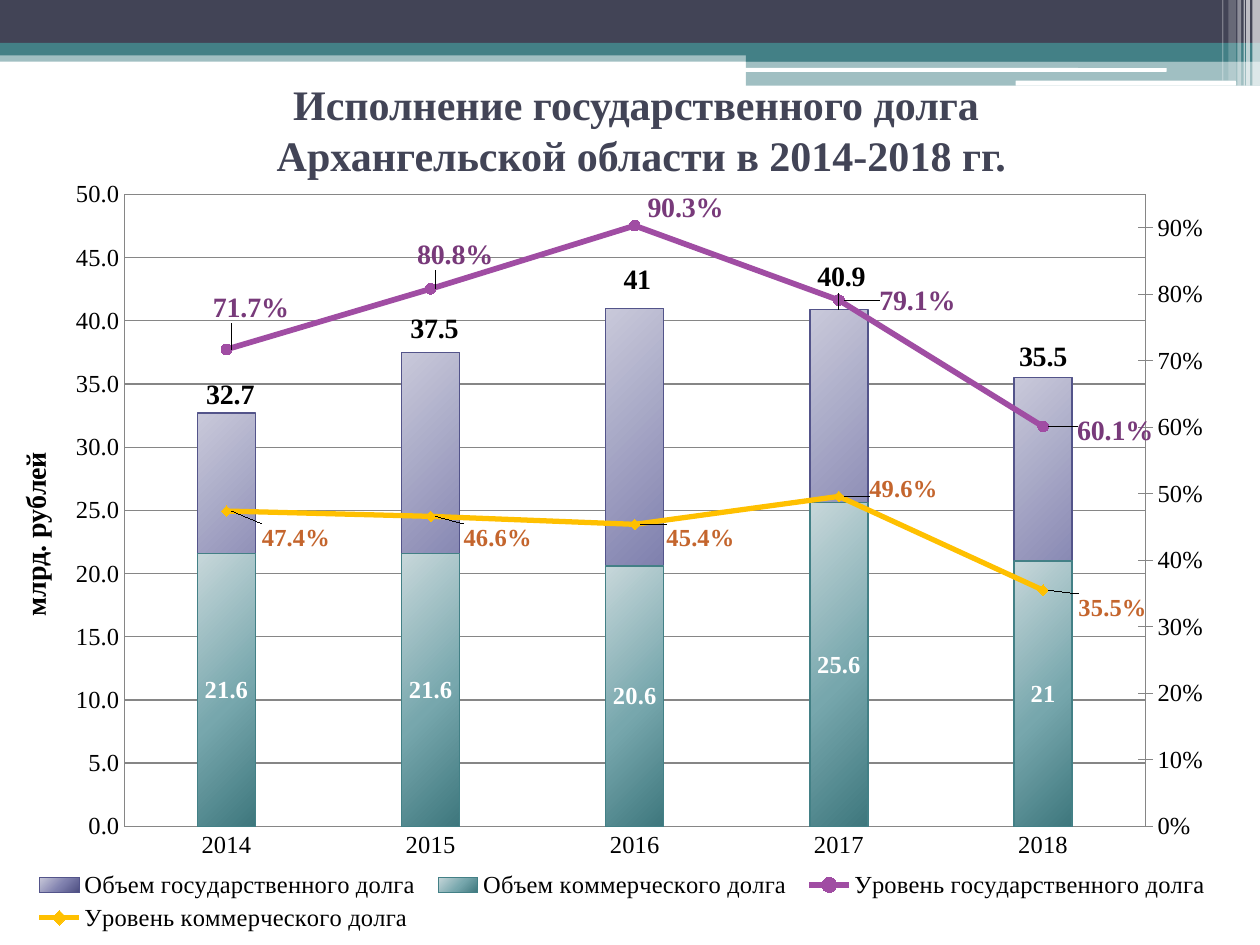
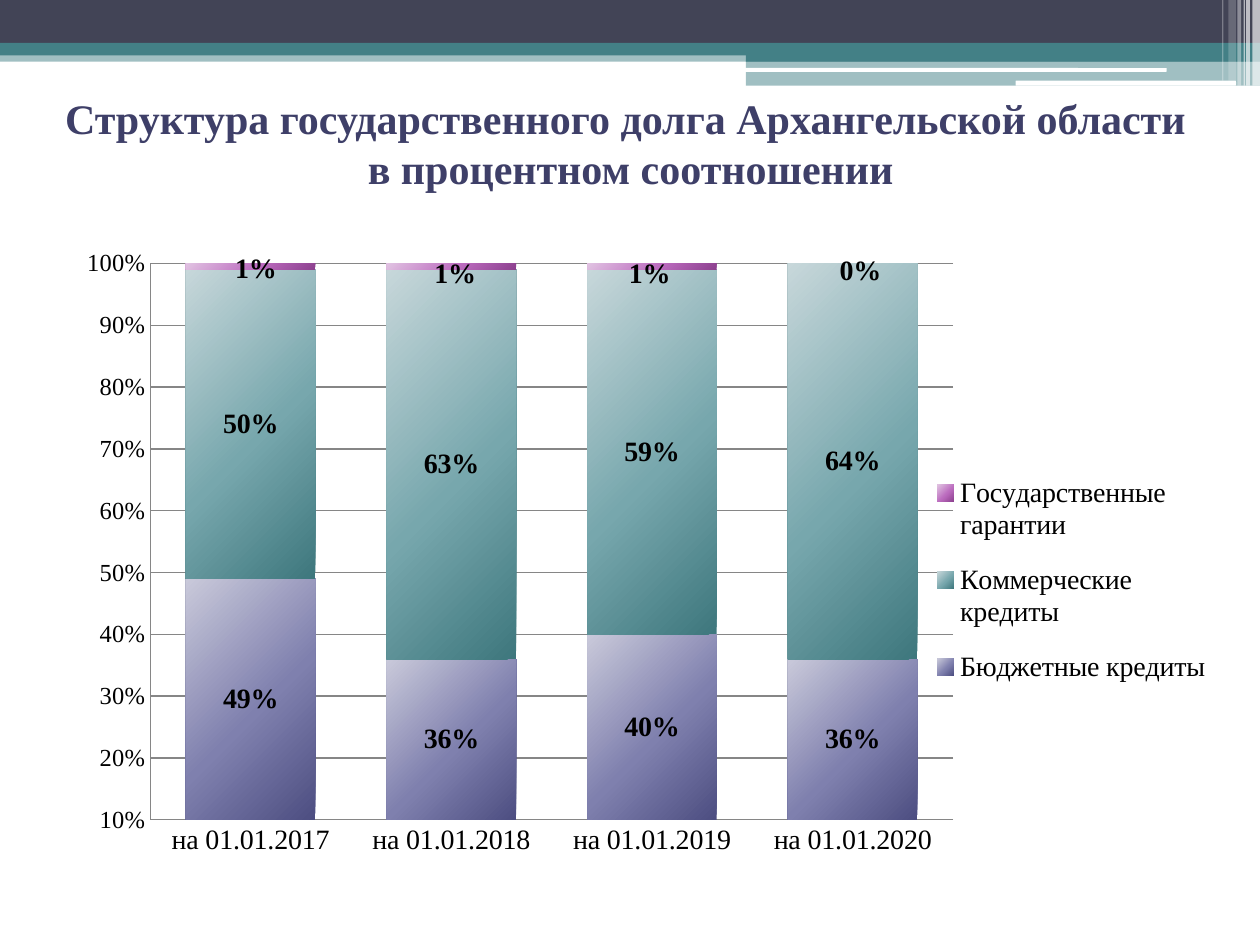
from dataclasses import dataclass
from typing import Any, NamedTuple, Optional

from pptx import Presentation
from pptx.chart.axis import ValueAxis
from pptx.chart.data import CategoryChartData
from pptx.dml.color import RGBColor
from pptx.enum.chart import (XL_CHART_TYPE, XL_LABEL_POSITION, XL_LEGEND_POSITION,
                             XL_MARKER_STYLE, XL_TICK_MARK)
from pptx.enum.shapes import MSO_SHAPE
from pptx.enum.text import MSO_ANCHOR, MSO_AUTO_SIZE, PP_ALIGN
from pptx.oxml import parse_xml
from pptx.oxml.ns import nsdecls, qn
from pptx.util import Inches, Pt

FONT = "Times New Roman"
BLACK = RGBColor(0x00, 0x00, 0x00)
WHITE = RGBColor(0xFF, 0xFF, 0xFF)
SLATE = RGBColor(0x42, 0x44, 0x56)
TEAL = RGBColor(0x43, 0x80, 0x86)
INDIGO = RGBColor(0x53, 0x54, 0x8A)
DARK_INDIGO = RGBColor(0x3E, 0x3F, 0x68)
PURPLE = RGBColor(0xA0, 0x4D, 0xA3)
DARK_PURPLE = RGBColor(0x78, 0x3A, 0x7A)
YELLOW = RGBColor(0xFF, 0xC0, 0x00)
ORANGE = RGBColor(0xC4, 0x65, 0x2D)
GRID_GRAY = RGBColor(0x86, 0x86, 0x86)

# Light, middle and dark colour of each column gradient
INDIGO_SHADES = (RGBColor(0xC9, 0xC9, 0xDA), RGBColor(0x7F, 0x80, 0xAE), RGBColor(0x4D, 0x4E, 0x81))
TEAL_SHADES = (RGBColor(0xC7, 0xD7, 0xDA), RGBColor(0x77, 0xA7, 0xAD), RGBColor(0x3E, 0x77, 0x7D))
PURPLE_SHADES = (RGBColor(0xE1, 0xC3, 0xE2), RGBColor(0xBC, 0x6C, 0xBF), RGBColor(0x8D, 0x41, 0x8F))


class Box(NamedTuple):
    left: float
    top: float
    width: float
    height: float


class Band(NamedTuple):
    box: Box
    color: RGBColor
    opacity: int = 100
    kind: MSO_SHAPE = MSO_SHAPE.RECTANGLE


@dataclass
class LabelStyle:
    size: int = 16
    color: RGBColor = BLACK
    position: Optional[XL_LABEL_POSITION] = None
    offsets: tuple = ()  # inches from the automatic place, one pair per point


@dataclass
class ChartSeries:
    name: str
    values: tuple
    labels: LabelStyle
    number_format: str = "General"
    shades: tuple = ()
    line: Optional[RGBColor] = None
    line_width: float = 0.75
    marker: Optional[XL_MARKER_STYLE] = None


BANDS = [
    Band(Box(0, 0.4, 10, 0.09), TEAL, 50),
    Band(Box(0, 0, 10, 0.34), SLATE),
    Band(Box(0, 0.34, 10, 0.1), TEAL),
    Band(Box(5.92, 0.39, 4.08, 0.1), TEAL),
    Band(Box(5.92, 0.48, 4.08, 0.2), TEAL, 50),
    Band(Box(5.91, 0.54, 3.35, 0.03), WHITE, kind=MSO_SHAPE.ROUNDED_RECTANGLE),
    Band(Box(8.06, 0.64, 1.75, 0.04), WHITE, kind=MSO_SHAPE.ROUNDED_RECTANGLE),
    Band(Box(9.94, 0, 0.06, 0.68), WHITE, 65),
    Band(Box(9.89, 0, 0.03, 0.68), WHITE, 65),
    Band(Box(9.87, 0, 0.01, 0.68), WHITE, 60),
    Band(Box(9.82, 0, 0.03, 0.68), WHITE, 40),
    Band(Box(9.75, 0, 0.06, 0.64), WHITE, 20),
    Band(Box(9.7, 0, 0.01, 0.64), WHITE, 30),
]

DEBT_YEARS = ("2014", "2015", "2016", "2017", "2018")
DEBT_COLUMNS = [
    ChartSeries("Объем государственного долга", (32.7, 37.5, 41, 40.9, 35.5),
                LabelStyle(position=XL_LABEL_POSITION.OUTSIDE_END,
                           offsets=((0.03, 0.02), (0.03, -0.02), (0.02, -0.06), (0.02, -0.09))),
                shades=INDIGO_SHADES, line=INDIGO),
    ChartSeries("Объем коммерческого долга", (21.6, 21.6, 20.6, 25.6, 21),
                LabelStyle(14, WHITE, XL_LABEL_POSITION.CENTER), shades=TEAL_SHADES, line=TEAL),
]
DEBT_LINES = [
    ChartSeries("Уровень государственного долга", (0.717, 0.808, 0.903, 0.791, 0.601),
                LabelStyle(16, DARK_PURPLE, XL_LABEL_POSITION.RIGHT,
                           ((-0.19, -0.33), (-0.19, -0.27), (0.02, -0.14), (0.24, 0.01), (0.19, 0.04))),
                "0.0%", line=PURPLE, line_width=3.25, marker=XL_MARKER_STYLE.CIRCLE),
    ChartSeries("Уровень коммерческого долга", (0.474, 0.466, 0.454, 0.496, 0.355),
                LabelStyle(14, ORANGE, XL_LABEL_POSITION.RIGHT,
                           ((0.2, 0.21), (0.18, 0.17), (0.17, 0.11), (0.16, -0.06), (0.2, 0.14))),
                "0.0%", line=YELLOW, line_width=3, marker=XL_MARKER_STYLE.DIAMOND),
]
STRUCTURE_DATES = tuple(f"на 01.01.{year}" for year in range(2017, 2021))
STRUCTURE_COLUMNS = [
    ChartSeries("Бюджетные кредиты", (0.49, 0.36, 0.4, 0.36), LabelStyle(), "0%", INDIGO_SHADES),
    ChartSeries("Коммерческие кредиты", (0.5, 0.63, 0.59, 0.64), LabelStyle(), "0%", TEAL_SHADES),
    ChartSeries("Государственные гарантии", (0.01, 0.01, 0.01, 0),
                LabelStyle(position=XL_LABEL_POSITION.CENTER,
                           offsets=((0.04, 0.02), (0.03, 0.06), (-0.02, 0.06), (0.06, 0.06))),
                "0%", PURPLE_SHADES),
]


def format_font(font: Any, size: int, color: RGBColor = BLACK, bold: bool = False) -> None:
    font.name = FONT
    font.size = Pt(size)
    font.bold = bold
    font.color.rgb = color


def write_text(text_frame: Any, text: str, *, size: int, color: RGBColor = BLACK,
               bold: bool = True, align: PP_ALIGN = PP_ALIGN.CENTER) -> None:
    text_frame.text = text
    for paragraph in text_frame.paragraphs:
        paragraph.alignment = align
        for run in paragraph.runs:
            format_font(run.font, size, color, bold)


def inches(box: Box) -> tuple:
    return tuple(Inches(length) for length in box)


def add_bands_to_master(presentation: Any, slide: Any) -> None:
    """Draw the header bands and move them to the master, behind its placeholders."""
    tree = presentation.slide_master.shapes._spTree
    for index, band in enumerate(BANDS):
        shape = slide.shapes.add_shape(band.kind, *inches(band.box))
        shape.shadow.inherit = False
        shape.fill.solid()
        shape.fill.fore_color.rgb = band.color
        shape.line.fill.background()
        if band.opacity < 100:
            color = next(shape._element.spPr.iter(qn("a:srgbClr")))
            color.append(parse_xml(f'<a:alpha {nsdecls("a")} val="{band.opacity * 1000}"/>'))
        shape._element.nvSpPr.cNvPr.set("id", str(100 + index))
        tree.insert(2 + index, shape._element)


def add_titled_slide(presentation: Any, text: str, box: Box, color: RGBColor) -> Any:
    slide = presentation.slides.add_slide(presentation.slide_layouts[5])
    title = slide.shapes.title
    title.left, title.top, title.width, title.height = inches(box)
    title.text_frame.word_wrap = True
    title.text_frame.auto_size = MSO_AUTO_SIZE.NONE
    title.text_frame.vertical_anchor = MSO_ANCHOR.MIDDLE
    write_text(title.text_frame, text, size=24, color=color)
    return slide


def set_layout(element: Any, index: int, x: float, y: float, width: Optional[float] = None,
               height: Optional[float] = None, inner: bool = False, edge: bool = True) -> None:
    """Place a chart part by fractions of the chart area."""
    for former in element.findall(qn("c:layout")):
        element.remove(former)
    parts = ['<c:layoutTarget val="inner"/>'] if inner else []
    if edge:
        parts += ['<c:xMode val="edge"/>', '<c:yMode val="edge"/>']
    for tag, value in (("x", x), ("y", y), ("w", width), ("h", height)):
        if value is not None:
            parts.append(f'<c:{tag} val="{value:.4f}"/>')
    element.insert(index, parse_xml(
        f'<c:layout {nsdecls("c")}><c:manualLayout>{"".join(parts)}</c:manualLayout></c:layout>'))


def fill_gradient(series: Any, shades: tuple) -> None:
    stops = "".join(f'<a:gs pos="{position}"><a:srgbClr val="{shade}"/></a:gs>'
                    for position, shade in zip((0, 55000, 100000), shades))
    series.format.fill.solid()
    solid = series._element.spPr.find(qn("a:solidFill"))
    solid.getparent().replace(solid, parse_xml(
        f'<a:gradFill {nsdecls("a")} rotWithShape="1"><a:gsLst>{stops}</a:gsLst><a:path path="circle">'
        '<a:fillToRect l="-40000" t="-90000" r="140000" b="190000"/></a:path></a:gradFill>'))


def format_series(series: Any, data: ChartSeries, box: Box) -> None:
    if data.shades:
        fill_gradient(series, data.shades)
    if data.line is None:
        series.format.line.fill.background()
    else:
        series.format.line.color.rgb = data.line
        series.format.line.width = Pt(data.line_width)
    if data.marker is not None:
        series.smooth = False
        series.marker.style = data.marker
        series.marker.size = 6
        series.marker.format.fill.solid()
        series.marker.format.fill.fore_color.rgb = data.line
        series.marker.format.line.color.rgb = data.line
    # Value labels, some of them shifted
    style = data.labels
    labels = series.data_labels
    labels.show_value = True
    labels.number_format = data.number_format
    labels.number_format_is_linked = False
    format_font(labels.font, style.size, style.color, True)
    if style.position is not None:
        labels.position = style.position
    for index, (shift_x, shift_y) in enumerate(style.offsets):
        label = series.points[index].data_label
        label.position = style.position
        format_font(label.font, style.size, style.color, True)
        set_layout(labels._element.findall(qn("c:dLbl"))[index], 1,
                   shift_x / box.width, shift_y / box.height, edge=False)


def format_axis(axis: Any, size: int, tick: XL_TICK_MARK = XL_TICK_MARK.NONE) -> None:
    axis.major_tick_mark = tick
    axis.minor_tick_mark = XL_TICK_MARK.NONE
    axis.format.line.color.rgb = GRID_GRAY
    format_font(axis.tick_labels.font, size)


def format_scale(axis: Any, low: float, high: float, unit: float, number_format: str) -> None:
    axis.minimum_scale, axis.maximum_scale, axis.major_unit = low, high, unit
    axis.tick_labels.number_format = number_format
    axis.tick_labels.number_format_is_linked = False


def add_column_chart(slide: Any, kind: XL_CHART_TYPE, box: Box, categories: tuple, series_list: list,
                     *, gap: int, plot_box: Box, legend_position: XL_LEGEND_POSITION,
                     legend_box: Box, legend_size: int, category_size: int) -> Any:
    chart_data = CategoryChartData()
    chart_data.categories = categories
    for data in series_list:
        chart_data.add_series(data.name, data.values, data.number_format)
    chart = slide.shapes.add_chart(kind, *inches(box), chart_data).chart
    chart.has_title = False
    format_font(chart.font, 16)
    plot = chart.plots[0]
    plot.gap_width, plot.overlap, plot.vary_by_categories = gap, 100, False
    set_layout(chart._chartSpace.chart.plotArea, 0, *plot_box, inner=True)
    format_axis(chart.category_axis, category_size)
    format_axis(chart.value_axis, 14)
    chart.value_axis.has_major_gridlines = True
    chart.value_axis.major_gridlines.format.line.color.rgb = GRID_GRAY
    chart.has_legend = True
    chart.legend.position = legend_position
    chart.legend.include_in_layout = False
    format_font(chart.legend.font, legend_size)
    set_layout(chart.legend._element, 1, *legend_box)
    return chart


def move_to_right_axis(chart: Any, first: int) -> ValueAxis:
    """Turn the series from index first on into lines on a second value axis."""
    columns = chart.plots[0]._element
    lines = parse_xml(
        f'<c:lineChart {nsdecls("c")}><c:grouping val="standard"/><c:varyColors val="0"/>'
        '<c:marker val="1"/><c:axId val="50010"/><c:axId val="50020"/></c:lineChart>')
    for offset, series in enumerate(columns.findall(qn("c:ser"))[first:]):
        for column_setting in series.findall(qn("c:invertIfNegative")):
            series.remove(column_setting)
        lines.insert(2 + offset, series)
    columns.addnext(lines)
    value_axis = parse_xml(
        f'<c:valAx {nsdecls("c")}><c:axId val="50020"/><c:scaling><c:orientation val="minMax"/></c:scaling>'
        '<c:delete val="0"/><c:axPos val="r"/><c:tickLblPos val="nextTo"/><c:crossAx val="50010"/>'
        '<c:crosses val="max"/><c:crossBetween val="between"/></c:valAx>')
    category_axis = parse_xml(
        f'<c:catAx {nsdecls("c")}><c:axId val="50010"/><c:scaling><c:orientation val="minMax"/></c:scaling>'
        '<c:delete val="1"/><c:axPos val="b"/><c:tickLblPos val="nextTo"/><c:crossAx val="50020"/>'
        '<c:crosses val="autoZero"/></c:catAx>')
    chart.value_axis._element.addnext(value_axis)
    value_axis.addnext(category_axis)
    return ValueAxis(value_axis)


def add_debt_chart(slide: Any) -> None:
    box = Box(0, 1.23, 9.88, 6.27)
    chart = add_column_chart(
        slide, XL_CHART_TYPE.COLUMN_CLUSTERED, box, DEBT_YEARS, DEBT_COLUMNS + DEBT_LINES,
        gap=252, plot_box=Box(0.1, 0.05, 0.82, 0.8), legend_position=XL_LEGEND_POSITION.BOTTOM,
        legend_box=Box(0.02, 0.9, 0.96, 0.09), legend_size=14, category_size=14)
    axis = chart.value_axis
    format_scale(axis, 0, 50, 5, "#,##0.0")
    write_text(axis.axis_title.text_frame, "млрд. рублей", size=16)
    axis.axis_title._element.find(".//" + qn("a:bodyPr")).set("rot", "-5400000")
    set_layout(axis.axis_title._element, 1, 0.01, 0.37)
    right_axis = move_to_right_axis(chart, len(DEBT_COLUMNS))
    format_axis(right_axis, 14, XL_TICK_MARK.CROSS)
    format_scale(right_axis, 0, 0.95, 0.1, "0%")
    for plot, series_list in zip(chart.plots, (DEBT_COLUMNS, DEBT_LINES)):
        for series, data in zip(plot.series, series_list):
            format_series(series, data, box)


def add_structure_chart(slide: Any) -> None:
    box = Box(0.35, 1.7, 9.37, 5.59)
    chart = add_column_chart(
        slide, XL_CHART_TYPE.COLUMN_STACKED_100, box, STRUCTURE_DATES, STRUCTURE_COLUMNS,
        gap=55, plot_box=Box(0.09, 0.07, 0.68, 0.79), legend_position=XL_LEGEND_POSITION.RIGHT,
        legend_box=Box(0.75, 0.34, 0.24, 0.36), legend_size=16, category_size=16)
    format_scale(chart.value_axis, 0.1, 1, 0.1, "0%")
    for series, data in zip(chart.plots[0].series, STRUCTURE_COLUMNS):
        format_series(series, data, box)


def main() -> None:
    presentation = Presentation()
    presentation.slide_width, presentation.slide_height = Inches(10), Inches(7.5)

    # Debt volume and level
    slide = add_titled_slide(
        presentation, "Исполнение государственного долга \vАрхангельской области в 2014-2018 гг.",
        Box(0.59, 0.68, 9, 0.69), SLATE)
    add_bands_to_master(presentation, slide)
    add_debt_chart(slide)

    # Debt structure
    slide = add_titled_slide(
        presentation, "Структура государственного долга Архангельской области \nв процентном соотношении",
        Box(0.28, 0.68, 9.45, 0.91), DARK_INDIGO)
    add_structure_chart(slide)
    presentation.save("out.pptx")


if __name__ == "__main__":
    main()
